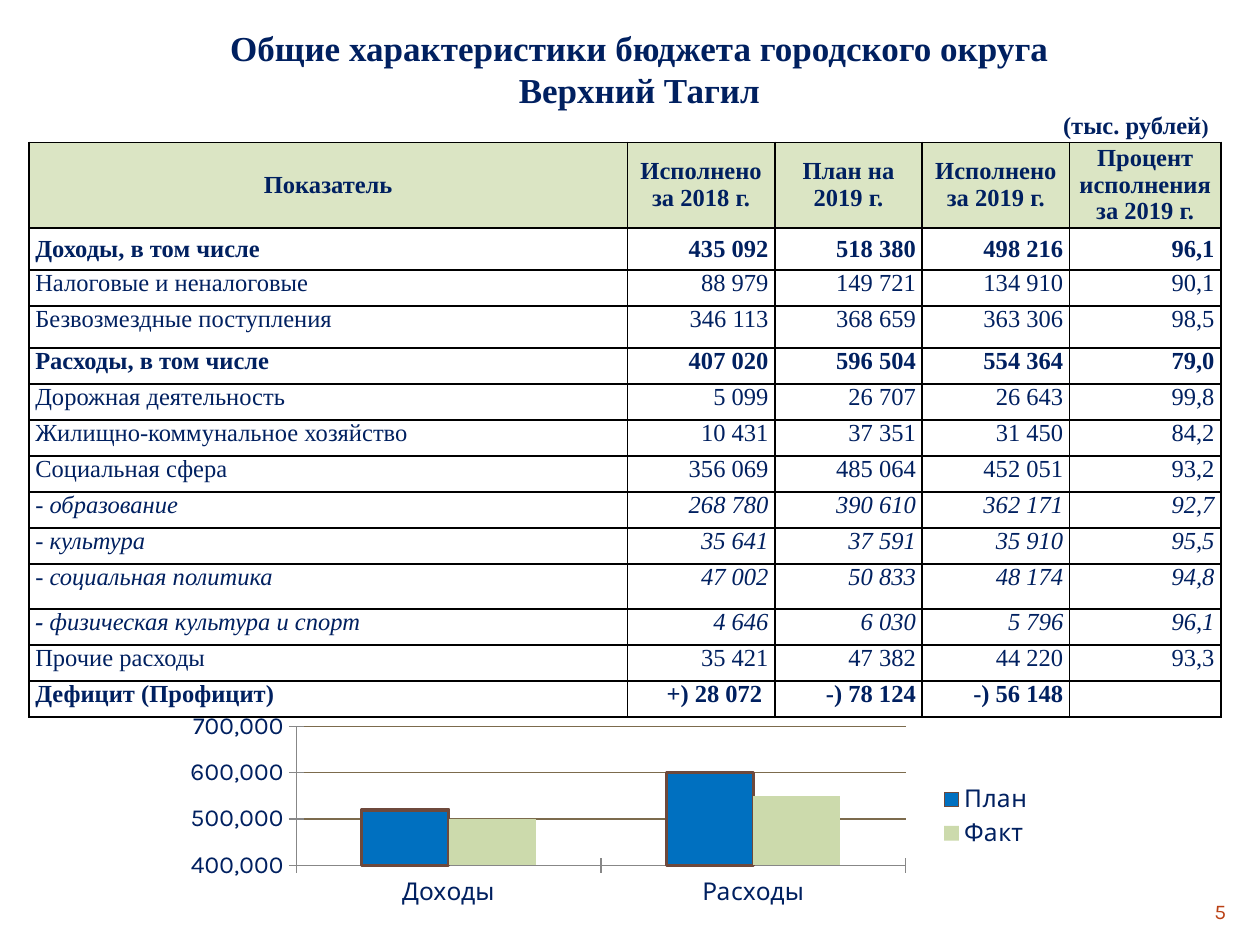
from lxml import etree
from pptx import Presentation
from pptx.chart.data import CategoryChartData
from pptx.dml.color import RGBColor
from pptx.enum.chart import XL_CHART_TYPE as ChartType, XL_LEGEND_POSITION as LegendPos, XL_TICK_MARK as Tick
from pptx.enum.text import MSO_ANCHOR as Anchor, PP_ALIGN as Align
from pptx.oxml import parse_xml
from pptx.oxml.ns import nsdecls, qn
from pptx.util import Pt

NAVY, GREEN = "002060", "CCDAAC"
SERIF, SANS = "Times New Roman", "Karla"


def color(code):
    return RGBColor.from_string(code)


def style(font, size, code=NAVY, name=SERIF, bold=None, italic=None):
    font.size, font.name, font.bold, font.italic = Pt(size), name, bold, italic
    font.color.rgb = color(code)


deck = Presentation()
deck.slide_width, deck.slide_height = Pt(720), Pt(540)
slide = deck.slides.add_slide(deck.slide_layouts[6])

# Page number
number = slide.shapes.add_textbox(Pt(648), Pt(509.76), Pt(59.76), Pt(19.44)).text_frame
number.word_wrap = True
number.text = "5"
number.paragraphs[0].alignment = Align.RIGHT
style(number.paragraphs[0].runs[0].font, 12, "BA4014", SANS)

# Chart: plan against fact
budget = CategoryChartData(number_format="#,##0")
budget.categories = ["Доходы", "Расходы"]
budget.add_series("План", (520000, 600000))
budget.add_series("Факт", (500000, 550000))
chart = slide.shapes.add_chart(ChartType.COLUMN_CLUSTERED, Pt(78.48), Pt(403.92),
                               Pt(519.12), Pt(125.28), budget).chart
chart.has_title = False
style(chart.font, 18, "704A3D", SANS)
chart.has_legend = True
chart.legend.position = LegendPos.RIGHT
chart.legend.include_in_layout = False
style(chart.legend.font, 14, name=SANS)

for axis in (chart.category_axis, chart.value_axis):
    style(axis.tick_labels.font, 14, name=SANS)
    axis.major_tick_mark = Tick.CROSS
    axis.format.line.color.rgb = color("878787")
    axis.format.line.width = Pt(0.75)
amounts = chart.value_axis
amounts.minimum_scale, amounts.maximum_scale, amounts.major_unit = 400000, 700000, 100000
amounts.tick_labels.number_format = "#,##0"
amounts.tick_labels.number_format_is_linked = False
amounts.major_gridlines.format.line.color.rgb = color("7C6B4D")
amounts.major_gridlines.format.line.width = Pt(0.75)

columns = chart.plots[0]
columns.vary_by_categories = False
columns.gap_width, columns.overlap = 150, 0
plan, fact = columns.series
for series, code in ((plan, "0070C0"), (fact, GREEN)):
    series.format.fill.solid()
    series.format.fill.fore_color.rgb = color(code)
plan.format.line.color.rgb = color("6E493C")
plan.format.line.width = Pt(2)

# Fixed place of the plot inside the chart
plot_area = columns._element.getparent()
for old in plot_area.findall(qn("c:layout")):
    plot_area.remove(old)
plot_area.insert(0, parse_xml(
    f'<c:layout {nsdecls("c")}><c:manualLayout><c:layoutTarget val="inner"/>'
    '<c:xMode val="edge"/><c:yMode val="edge"/><c:x val="0.175"/><c:y val="0.089"/>'
    '<c:w val="0.671"/><c:h val="0.635"/></c:manualLayout></c:layout>'))

# Table: text, style (b bold, i italic, m bold dash) and row height
indicators = [
    ("Показатель", "Исполнено за 2018 г.", "План на 2019 г.", "Исполнено за 2019 г.",
     "Процент исполнения за 2019 г.", "b", 36),
    ("Доходы, в том числе", "435 092", "518 380", "498 216", "96,1", "b", 24),
    ("Налоговые и неналоговые", "88 979", "149 721", "134 910", "90,1", "", 20.6),
    ("Безвозмездные поступления", "346 113", "368 659", "363 306", "98,5", "", 24),
    ("Расходы, в том числе", "407 020", "596 504", "554 364", "79,0", "b", 20.6),
    ("Дорожная деятельность", "5 099", "26 707", "26 643", "99,8", "", 20.6),
    ("Жилищно-коммунальное хозяйство", "10 431", "37 351", "31 450", "84,2", "", 20.6),
    ("Социальная сфера", "356 069", "485 064", "452 051", "93,2", "", 20.6),
    ("- образование", "268 780", "390 610", "362 171", "92,7", "i", 20.6),
    ("- культура", "35 641", "37 591", "35 910", "95,5", "i", 20.6),
    ("- социальная политика", "47 002", "50 833", "48 174", "94,8", "i", 25.7),
    ("- физическая культура и спорт", "4 646", "6 030", "5 796", "96,1", "im", 20.6),
    ("Прочие расходы", "35 421", "47 382", "44 220", "93,3", "", 20.6),
    ("Дефицит (Профицит)", "+) 28 072 ", "-) 78 124", "-) 56 148", "", "b", 20.6),
]
widths = [342, 84.24, 84.24, 84.24, 86.4]
table = slide.shapes.add_table(len(indicators), len(widths), Pt(16.56), Pt(81.36),
                               Pt(sum(widths)), Pt(sum(line[-1] for line in indicators))).table
table.first_row = table.horz_banding = False
for column, width in zip(table.columns, widths):
    column.width = Pt(width)

for r, (*texts, look, height) in enumerate(indicators):
    table.rows[r].height = Pt(height)
    for c, text in enumerate(texts):
        cell = table.cell(r, c)
        cell.margin_left = cell.margin_right = Pt(3.6)
        cell.margin_top = cell.margin_bottom = 0
        cell.vertical_anchor = Anchor.MIDDLE if r < 2 else Anchor.TOP
        for side in ("lnL", "lnR", "lnT", "lnB"):
            cell._tc.get_or_add_tcPr().append(parse_xml(
                f'<a:{side} {nsdecls("a")} w="12700"><a:solidFill><a:srgbClr val="000000"/>'
                f'</a:solidFill></a:{side}>'))
        if r == 0:
            cell.fill.solid()
            cell.fill.fore_color.rgb = color(GREEN)
            tint = cell._tc.tcPr.find(qn("a:solidFill"))[0]
            etree.SubElement(tint, qn("a:alpha")).set("val", "70000")
        else:
            cell.fill.background()

        entry = cell.text_frame.paragraphs[0]
        entry.alignment = Align.CENTER if r == 0 else Align.RIGHT if c else Align.LEFT
        if r == 0:
            entry.line_spacing = 0.97
        style(entry.font, 14)
        parts = [text[:2], text[2:]] if "m" in look and c == 0 else [text] if text else []
        for k, part in enumerate(parts):
            run = entry.add_run()
            run.text = part
            dash = len(parts) == 2 and k == 0
            style(run.font, 14, bold="b" in look or dash, italic="i" in look)

# Title and unit of measure
title = slide.shapes.add_textbox(Pt(33.12), Pt(11.52), Pt(664.56), Pt(72.72)).text_frame
title.word_wrap = True
heading = [
    (Align.CENTER, [("Общие характеристики бюджета городского округа", 20)]),
    (Align.CENTER, [("Верхний Тагил", 20)]),
    (Align.RIGHT, [("(тыс. рублей", 14), (")", 12)]),
]
for k, (alignment, parts) in enumerate(heading):
    line = title.add_paragraph() if k else title.paragraphs[0]
    line.alignment = alignment
    for text, size in parts:
        run = line.add_run()
        run.text = text
        style(run.font, size, bold=True)

deck.save("out.pptx")
